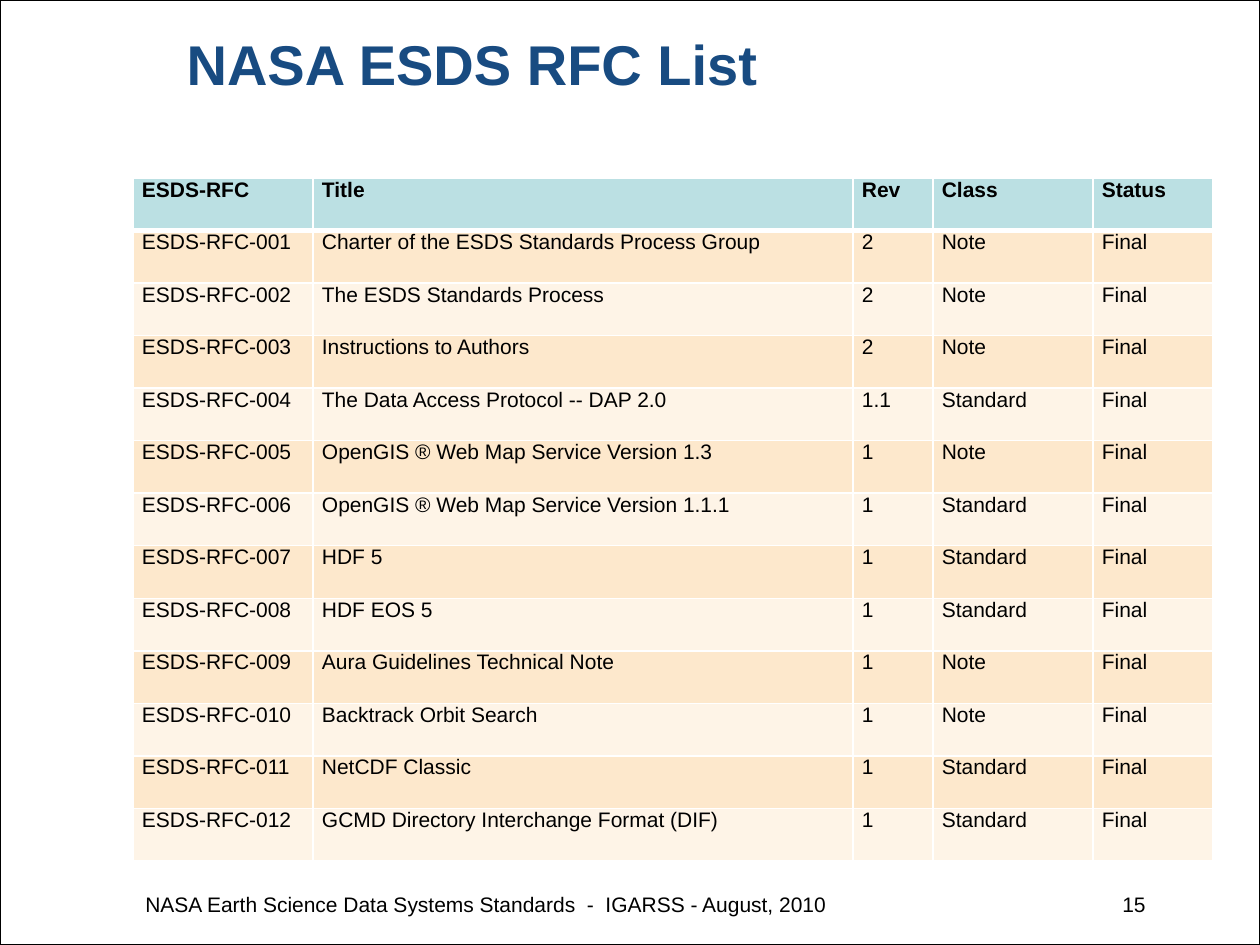
"""Build the NASA ESDS RFC list slide."""
from lxml.etree import SubElement
from pptx import Presentation
from pptx.dml.color import RGBColor
from pptx.enum.shapes import MSO_SHAPE
from pptx.enum.text import MSO_ANCHOR, MSO_AUTO_SIZE, PP_ALIGN
from pptx.oxml.ns import qn
from pptx.util import Emu, Pt

EMU_PER_PX = 914400 / 126
COLORS = {
    "text": "000000",
    "title": "184B81",
    "header": "BBE0E3",
    "odd_row": "FDE8CC",
    "even_row": "FEF4E7",
    "border": "FFFFFF",
}
HEADINGS = ("ESDS-RFC", "Title", "Rev", "Class", "Status")
COLUMN_WIDTHS = (180, 540, 80, 160, 120)
RFCS = (
    ("Charter of the ESDS Standards Process Group", "2", "Note"),
    ("The ESDS Standards Process", "2", "Note"),
    ("Instructions to Authors", "2", "Note"),
    ("The Data Access Protocol -- DAP 2.0", "1.1", "Standard"),
    ("OpenGIS ® Web Map Service Version 1.3", "1", "Note"),
    ("OpenGIS ® Web Map Service Version 1.1.1", "1", "Standard"),
    ("HDF 5", "1", "Standard"),
    ("HDF EOS 5", "1", "Standard"),
    ("Aura Guidelines Technical Note", "1", "Note"),
    ("Backtrack Orbit Search", "1", "Note"),
    ("NetCDF Classic", "1", "Standard"),
    ("GCMD Directory Interchange Format (DIF)", "1", "Standard"),
)


def px(length):
    return Emu(round(length * EMU_PER_PX))


def color(name):
    return RGBColor.from_string(COLORS[name])


class SlideBuilder:
    def __init__(self, slide, font_name="Arial", text_size=12):
        self.slide = slide
        self.font_name = font_name
        self.text_size = text_size

    def style(self, paragraph, size=None, bold=False, color_name="text"):
        font = paragraph.font
        font.name = self.font_name
        font.size = Pt(size or self.text_size)
        font.bold = bold
        font.color.rgb = color(color_name)

    def frame(self, width, height):
        frame = self.slide.shapes.add_shape(MSO_SHAPE.RECTANGLE, 0, 0, px(width), px(height))
        frame.shadow.inherit = False
        frame.fill.background()
        frame.line.color.rgb = color("text")
        frame.line.width = Pt(0.75)

    def title(self, text, left, top, width, height):
        title = self.slide.shapes.title
        title.left, title.top, title.width, title.height = map(px, (left, top, width, height))
        title.text_frame.text = text
        title.text_frame.auto_size = MSO_AUTO_SIZE.NONE
        title.text_frame.vertical_anchor = MSO_ANCHOR.MIDDLE
        heading = title.text_frame.paragraphs[0]
        heading.alignment = PP_ALIGN.LEFT
        heading.line_spacing = 0.85
        self.style(heading, 32, True, "title")

    def text(self, text, left, top, width, height, alignment=PP_ALIGN.LEFT):
        box = self.slide.shapes.add_textbox(*map(px, (left, top, width, height)))
        box.text_frame.word_wrap = True
        box.text_frame.text = text
        line = box.text_frame.paragraphs[0]
        line.alignment = alignment
        self.style(line)

    def borders(self, cell, top, bottom):
        properties = cell._tc.get_or_add_tcPr()
        for side, points in (("L", 1), ("R", 1), ("T", top), ("B", bottom)):
            border = SubElement(properties, qn(f"a:ln{side}"), w=str(Pt(points)))
            fill = SubElement(border, qn("a:solidFill"))
            SubElement(fill, qn("a:srgbClr"), val=COLORS["border"])

    def cell(self, cell, text, row):
        cell.margin_left = cell.margin_right = px(9)
        cell.margin_top = cell.margin_bottom = 0
        cell.vertical_anchor = MSO_ANCHOR.TOP
        self.borders(cell, 3 if row == 1 else 1, 3 if row == 0 else 1)
        band = "odd_row" if row % 2 else "even_row"
        cell.fill.solid()
        cell.fill.fore_color.rgb = color("header" if row == 0 else band)
        cell.text = text
        self.style(cell.text_frame.paragraphs[0], bold=row == 0)

    def table(self, rows, column_widths, left, top, height):
        table = self.slide.shapes.add_table(
            len(rows), len(column_widths),
            px(left), px(top), px(sum(column_widths)), px(height),
        ).table
        table.horz_banding = False
        for column, width in zip(table.columns, column_widths):
            column.width = px(width)
        for row, values in enumerate(rows):
            for column, value in enumerate(values):
                self.cell(table.cell(row, column), value, row)


def main():
    presentation = Presentation()
    presentation.slide_width, presentation.slide_height = px(1260), px(945)
    slide = presentation.slides.add_slide(presentation.slide_layouts[5])
    builder = SlideBuilder(slide)
    rows = [HEADINGS] + [
        (f"ESDS-RFC-{number:03}", *rfc, "Final") for number, rfc in enumerate(RFCS, 1)
    ]
    builder.frame(1260, 945)
    builder.title("NASA ESDS RFC List", 174, 10, 1056, 117)
    builder.table(rows, COLUMN_WIDTHS, 133, 178, 683)
    builder.text("15", 1041, 885, 117, 49, PP_ALIGN.RIGHT)
    builder.text(
        "NASA Earth Science Data Systems Standards  -  IGARSS - August, 2010",
        133, 885, 834, 49,
    )
    presentation.save("out.pptx")


if __name__ == "__main__":
    main()
